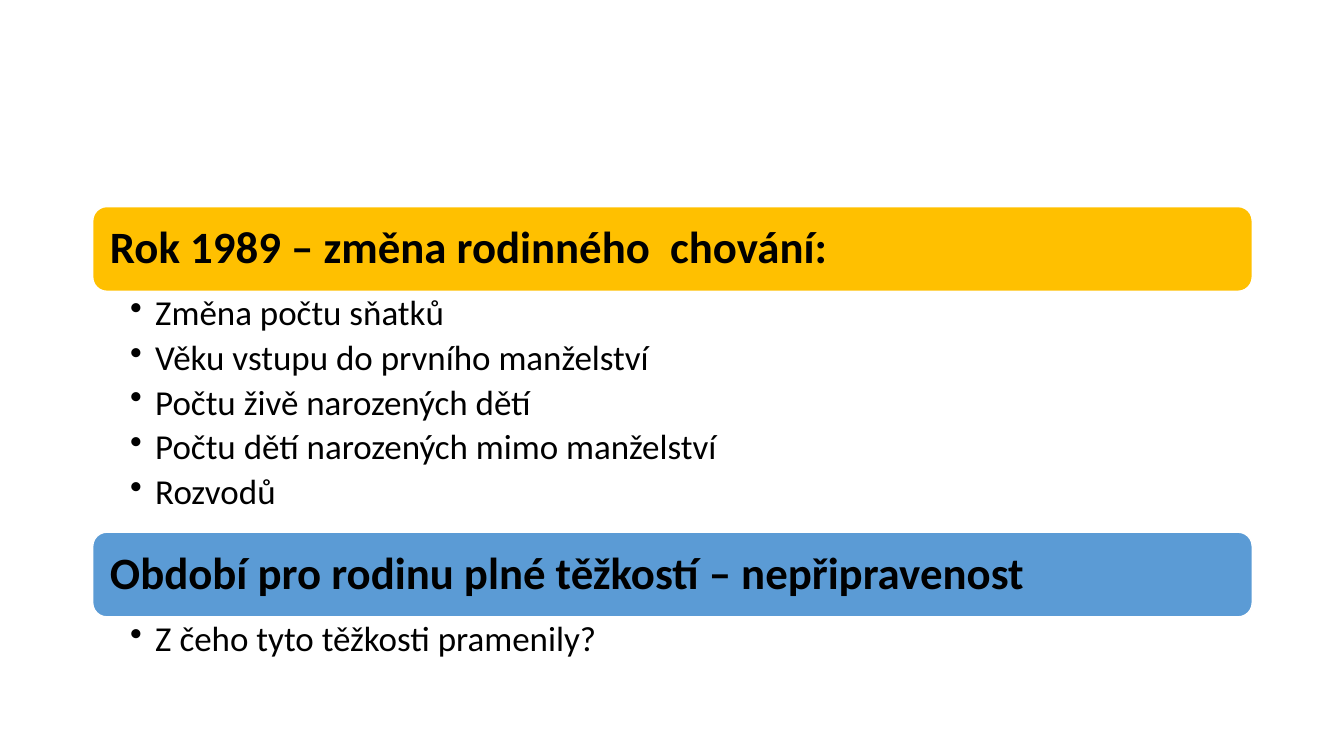
from lxml import etree
from pptx import Presentation
from pptx.dml.color import RGBColor
from pptx.enum.shapes import MSO_SHAPE
from pptx.enum.text import MSO_ANCHOR, PP_ALIGN
from pptx.oxml.ns import qn
from pptx.util import Inches, Pt

ROUND = MSO_SHAPE.ROUNDED_RECTANGLE
MIDDLE, TOP = MSO_ANCHOR.MIDDLE, MSO_ANCHOR.TOP
LEFT = PP_ALIGN.LEFT
GOLD = RGBColor(0xFF, 0xC0, 0x00)
BLUE = RGBColor(0x5B, 0x9B, 0xD5)
WHITE = RGBColor(0xFF, 0xFF, 0xFF)
BLACK = RGBColor(0x00, 0x00, 0x00)

# Heading, bar colour, height of the list, list items
PARTS = [
    ("Rok 1989 – změna rodinného  chování:", GOLD, 2.39, [
        "Změna počtu sňatků",
        "Věku vstupu do prvního manželství",
        "Počtu živě narozených dětí",
        "Počtu dětí narozených mimo manželství",
        "Rozvodů",
    ]),
    ("Období pro rodinu plné těžkostí – nepřipravenost", BLUE, 0.58, [
        "Z čeho tyto těžkosti pramenily?",
    ]),
]
X, WIDTH, BAR = 0.92, 11.5, 0.84


def set_frame(frame, anchor, left, top, right):
    frame.word_wrap = True
    frame.vertical_anchor = anchor
    frame.margin_left, frame.margin_right = Inches(left), Inches(right)
    frame.margin_top = frame.margin_bottom = Inches(top)


def set_text(para, text, size, bold, after):
    para.text = text
    para.alignment = LEFT
    para.line_spacing = 0.9
    para.space_after = Pt(after)
    font = para.runs[0].font
    font.name, font.size, font.bold = "Calibri", Pt(size), bold
    font.color.rgb = BLACK


prs = Presentation()
prs.slide_width, prs.slide_height = Inches(13.33), Inches(7.5)
slide = prs.slides.add_slide(prs.slide_layouts[6])

y = 2.05
for head, color, height, items in PARTS:
    # Heading bar
    bar = slide.shapes.add_shape(
        ROUND, Inches(X), Inches(y), Inches(WIDTH), Inches(BAR))
    bar.shadow.inherit = False
    bar.fill.solid()
    bar.fill.fore_color.rgb = color
    bar.line.color.rgb = WHITE
    bar.line.width = Pt(1)
    set_frame(bar.text_frame, MIDDLE, 0.13, 0.13, 0.13)
    set_text(bar.text_frame.paragraphs[0], head, 32, True, 0)
    y += BAR

    # Bulleted list under the bar
    box = slide.shapes.add_textbox(
        Inches(X), Inches(y), Inches(WIDTH), Inches(height))
    frame = box.text_frame
    set_frame(frame, TOP, 0.37, 0.04, 0.25)
    for i, item in enumerate(items):
        para = frame.add_paragraph() if i else frame.paragraphs[0]
        set_text(para, item, 25, False, 5)
        para.level = 1
        props = para._p.get_or_add_pPr()
        props.set("marL", str(Inches(0.25)))
        props.set("indent", str(Inches(-0.25)))
        etree.SubElement(props, qn("a:buChar")).set("char", "•")
    y += height

prs.save("out.pptx")
